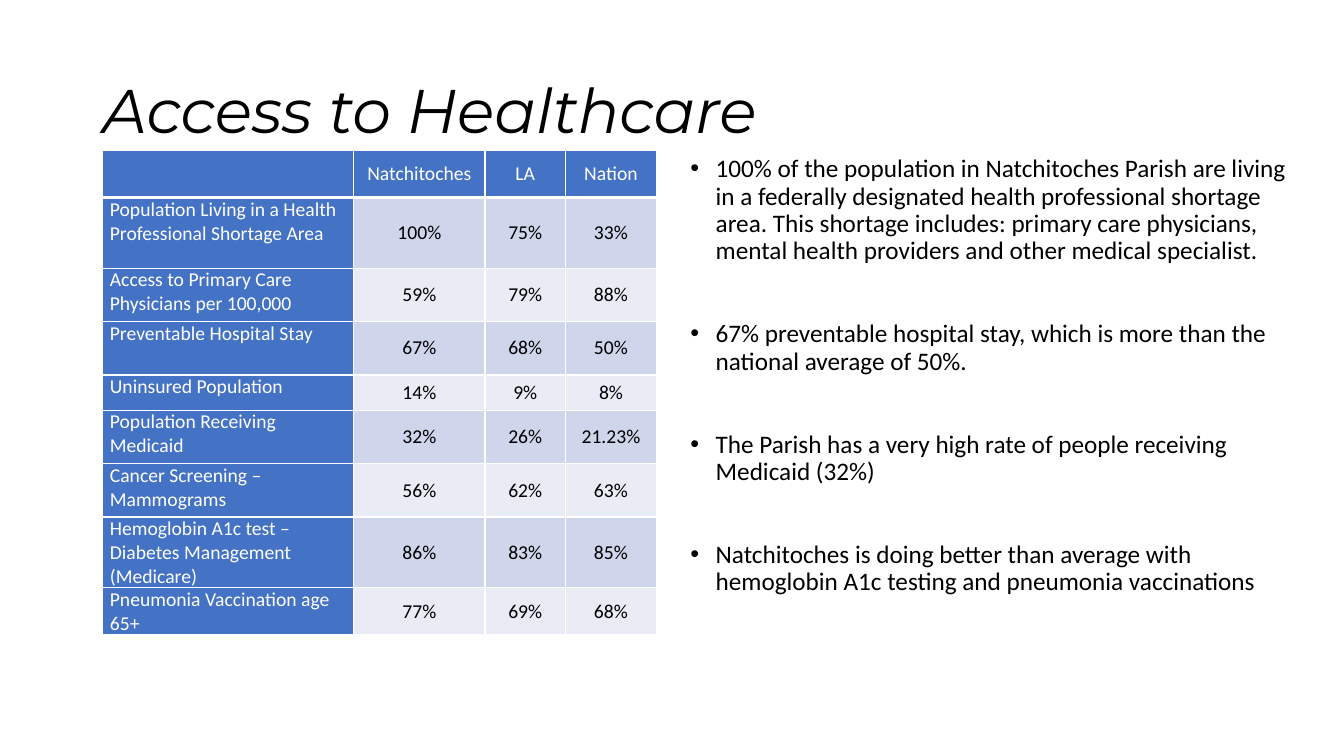
"""Build the Access to Healthcare slide: a comparison table beside its key findings."""
from lxml import etree
from pptx import Presentation
from pptx.dml.color import RGBColor
from pptx.enum.text import MSO_ANCHOR, PP_ALIGN
from pptx.oxml.ns import qn
from pptx.util import Inches, Pt

TOP, MIDDLE = MSO_ANCHOR.TOP, MSO_ANCHOR.MIDDLE
LEFT, CENTER = PP_ALIGN.LEFT, PP_ALIGN.CENTER
BLACK = RGBColor(0x00, 0x00, 0x00)
WHITE = RGBColor(0xFF, 0xFF, 0xFF)
BLUE = RGBColor(0x44, 0x72, 0xC4)
BANDS = (RGBColor(0xE9, 0xEB, 0xF5), RGBColor(0xCF, 0xD5, 0xEA))

TITLE = "Access to Healthcare"
MEASURES = [
    ("", "Natchitoches", "LA", "Nation"),
    ("Population Living in a Health Professional Shortage Area", "100%", "75%", "33%"),
    ("Access to Primary Care Physicians per 100,000", "59%", "79%", "88%"),
    ("Preventable Hospital Stay", "67%", "68%", "50%"),
    ("Uninsured Population", "14%", "9%", "8%"),
    ("Population Receiving Medicaid", "32%", "26%", "21.23%"),
    ("Cancer Screening – Mammograms", "56%", "62%", "63%"),
    ("Hemoglobin A1c test – Diabetes Management (Medicare)", "86%", "83%", "85%"),
    ("Pneumonia Vaccination age 65+", "77%", "69%", "68%"),
]
COLUMN_WIDTHS = (2.49, 1.3, 0.8, 0.9)
ROW_HEIGHTS = (0.47, 0.7, 0.53, 0.53, 0.35, 0.53, 0.53, 0.7, 0.47)
FINDINGS = [
    "100% of the population in Natchitoches Parish are living in a federally designated "
    "health professional shortage area. This shortage includes: primary care physicians, "
    "mental health providers and other medical specialist.",
    "67% preventable hospital stay, which is more than the national average of 50%.",
    "The Parish has a very high rate of people receiving Medicaid (32%)",
    "Natchitoches is doing better than average with hemoglobin A1c testing and "
    "pneumonia vaccinations",
]


def style(paragraph, size, color, face="Calibri"):
    paragraph.font.size = Pt(size)
    paragraph.font.name = face
    paragraph.font.color.rgb = color


def add_text_frame(slide, left, top, width, height, anchor):
    area = slide.shapes.add_textbox(Inches(left), Inches(top), Inches(width), Inches(height))
    area.text_frame.word_wrap = True
    area.text_frame.vertical_anchor = anchor
    return area.text_frame


def add_borders(cell, bottom_width):
    properties = cell._tc.get_or_add_tcPr()
    widths = {"a:lnL": 1, "a:lnR": 1, "a:lnT": 1, "a:lnB": bottom_width}
    for position, (side, width) in enumerate(widths.items()):
        border = etree.Element(qn(side), w=str(Pt(width)))
        fill = etree.SubElement(border, qn("a:solidFill"))
        etree.SubElement(fill, qn("a:srgbClr"), val=str(WHITE))
        properties.insert(position, border)


def add_title(slide):
    frame = add_text_frame(slide, 0.92, 0.4, 11.5, 1.45, MIDDLE)
    heading = frame.paragraphs[0]
    heading.text = TITLE
    heading.line_spacing = 0.9
    style(heading, 44, BLACK, "Montserrat")
    heading.font.italic = True


def add_measures(slide):
    table = slide.shapes.add_table(
        len(MEASURES), len(COLUMN_WIDTHS), Inches(1.02), Inches(1.49),
        Inches(sum(COLUMN_WIDTHS)), Inches(sum(ROW_HEIGHTS))).table
    for column, width in zip(table.columns, COLUMN_WIDTHS):
        column.width = Inches(width)
    for row, height in zip(table.rows, ROW_HEIGHTS):
        row.height = Inches(height)

    for r, measure in enumerate(MEASURES):
        for c, value in enumerate(measure):
            cell = table.cell(r, c)
            is_header, is_label = r == 0, r > 0 and c == 0
            on_blue = is_header or is_label
            cell.margin_left = cell.margin_right = Inches(0.07)
            cell.margin_top = cell.margin_bottom = 0
            cell.vertical_anchor = TOP if is_label else MIDDLE
            cell.fill.solid()
            cell.fill.fore_color.rgb = BLUE if on_blue else BANDS[r % 2]
            add_borders(cell, 3 if is_header else 1)
            entry = cell.text_frame.paragraphs[0]
            entry.text = value
            entry.alignment = LEFT if is_label else CENTER
            entry.space_after = Pt(10)
            style(entry, 14, WHITE if on_blue else BLACK)


def add_findings(slide):
    frame = add_text_frame(slide, 6.75, 1.5, 6.21, 5.2, TOP)
    for i, finding in enumerate(FINDINGS):
        point = frame.add_paragraph() if i else frame.paragraphs[0]
        point.text = finding
        point.line_spacing = 0.9
        point.space_before = Pt(40 if i else 0)
        properties = point._p.get_or_add_pPr()
        properties.set("marL", str(Inches(0.25)))
        properties.set("indent", str(Inches(-0.25)))
        etree.SubElement(properties, qn("a:buFont"), typeface="Arial")
        etree.SubElement(properties, qn("a:buChar"), char="•")
        style(point, 18, BLACK)


def main():
    deck = Presentation()
    deck.slide_width, deck.slide_height = Inches(13.33), Inches(7.5)
    slide = deck.slides.add_slide(deck.slide_layouts[6])
    add_title(slide)
    add_measures(slide)
    add_findings(slide)
    deck.save("out.pptx")


if __name__ == "__main__":
    main()
